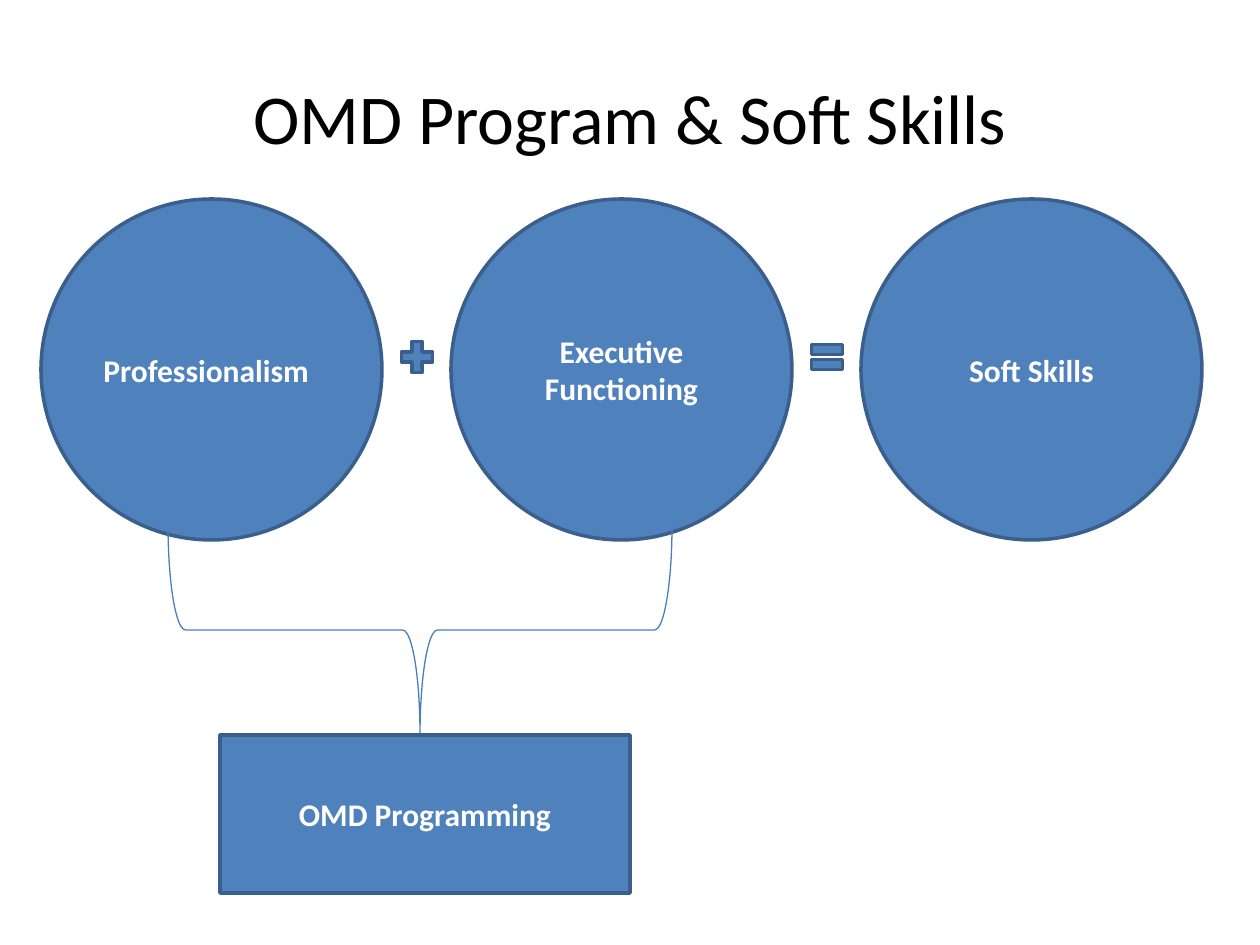
from pptx import Presentation, util as u
from pptx.dml.color import RGBColor
from pptx.enum import shapes, text

PX = 914400 / 126
BLUE = RGBColor(0x4F, 0x81, 0xBD)
OUTLINE = RGBColor(0x3A, 0x5F, 0x8C)
BRACE = RGBColor(0x4B, 0x7E, 0xBC)
WHITE = RGBColor(255, 255, 255)
BLACK = RGBColor(0, 0, 0)
FONT = "Calibri"
MSO = shapes.MSO_SHAPE
CENTER, LEFT = text.PP_ALIGN.CENTER, text.PP_ALIGN.LEFT


def px(n):
    return u.Emu(round(n * PX))


def set_text(sp, words, size, color, bold=False, align=CENTER):
    tf = sp.text_frame
    tf.word_wrap = True
    tf.vertical_anchor = text.MSO_ANCHOR.MIDDLE
    tf.text = words
    p = tf.paragraphs[0]
    p.alignment = align
    font = p.runs[0].font
    font.name, font.size, font.bold = FONT, u.Pt(size), bold
    font.color.rgb = color


def add_block(slide, kind, x, y, w, h, words="", align=CENTER):
    """Add a filled, outlined shape with an optional bold label."""
    sp = slide.shapes.add_shape(kind, px(x), px(y), px(w), px(h))
    sp.shadow.inherit = False
    sp.fill.solid()
    sp.fill.fore_color.rgb = BLUE
    sp.line.color.rgb = OUTLINE
    sp.line.width = u.Pt(2)
    if words:
        set_text(sp, words, 18, WHITE, True, align)
    return sp


def add_title(slide, x, y, w, h):
    sp = slide.shapes.title
    sp.left, sp.top, sp.width, sp.height = px(x), px(y), px(w), px(h)
    set_text(sp, "OMD Program & Soft Skills", 40, BLACK)


def add_equation(slide, x, y, size, pitch):
    """Add the row of circles with an operator after each but the last."""
    terms = [
        ("Professionalism", LEFT, MSO.MATH_PLUS),
        ("Executive Functioning", CENTER, MSO.MATH_EQUAL),
        ("Soft Skills", CENTER, None),
    ]
    sign = 42
    for i, (words, align, operator) in enumerate(terms):
        left = x + i * pitch
        add_block(slide, MSO.OVAL, left, y, size, size, words, align)
        if operator:
            add_block(slide, operator, left + size + 14, y + 137, sign, sign)


def add_down_brace(slide, x, y, w, h):
    """Add a right brace turned to point down, filling the given box."""
    shift = (w - h) / 2
    sp = slide.shapes.add_shape(
        MSO.RIGHT_BRACE, px(x + shift), px(y - shift), px(h), px(w))
    sp.rotation = 90
    sp.shadow.inherit = False
    sp.fill.background()
    sp.line.color.rgb = BRACE
    sp.line.width = u.Pt(0.75)


def main():
    prs = Presentation()
    prs.slide_width, prs.slide_height = u.Inches(10), u.Inches(7.5)
    slide = prs.slides.add_slide(prs.slide_layouts[5])
    add_title(slide, 63, 38, 1134, 157)
    add_equation(slide, 41, 199, 341, 410)
    add_down_brace(slide, 168, 525, 504, 210)
    add_block(slide, MSO.RECTANGLE, 220, 735, 410, 158, "OMD Programming")
    prs.save("out.pptx")


if __name__ == "__main__":
    main()
